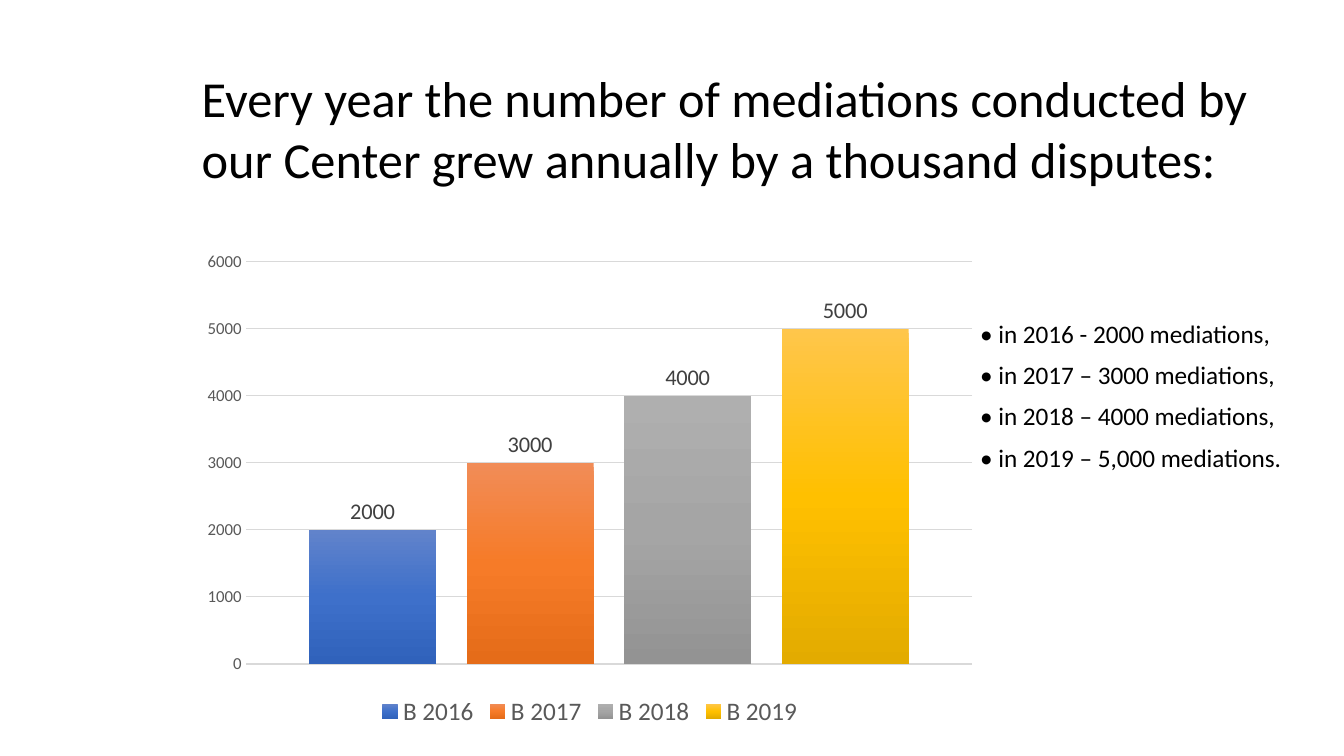
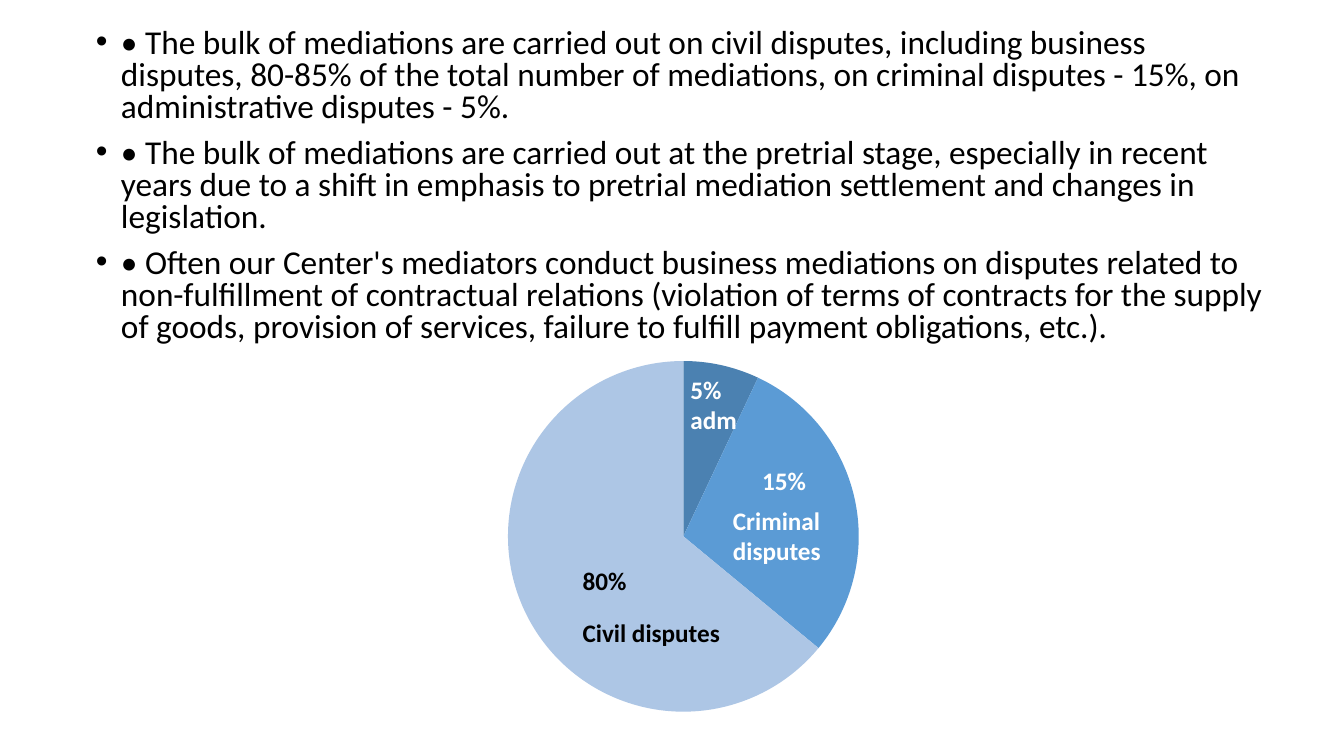
from lxml import etree
from pptx import Presentation
from pptx.chart.data import CategoryChartData
from pptx.dml.color import RGBColor
from pptx.enum import chart as ch, text
from pptx.oxml import parse_xml
from pptx.oxml.ns import nsdecls, qn
from pptx.util import Inches, Pt

W, H = 13.33, 7.5
FONT = "Calibri"
COLORS = {"black": "000000", "white": "FFFFFF", "axis": "595959",
          "label": "404040", "grid": "D9D9D9"}

TITLE = "Every year the number of mediations conducted by our Center grew annually by a thousand disputes:"
YEAR_LINES = [
    "• in 2016 - 2000 mediations,",
    "• in 2017 – 3000 mediations,",
    "• in 2018 – 4000 mediations,",
    "• in 2019 – 5,000 mediations.",
]
YEARS = [
    ("В 2016", 2000, ("6183CB", "3E70CA", "3062BB")),
    ("В 2017", 3000, ("F18C57", "F67B28", "E56C19")),
    ("В 2018", 4000, ("AFAFAF", "A5A5A5", "939393")),
    ("В 2019", 5000, ("FFC64B", "FFC000", "E3AB00")),
]
PRACTICE = [
    "• The bulk of mediations are carried out on civil disputes, including business disputes, 80-85% of the total number of mediations, on criminal disputes - 15%, on administrative disputes - 5%.",
    "• The bulk of mediations are carried out at the pretrial stage, especially in recent years due to a shift in emphasis to pretrial mediation settlement and changes in legislation.",
    "• Often our Center's mediators conduct business mediations on disputes related to non-fulfillment of contractual relations (violation of terms of contracts for the supply of goods, provision of services, failure to fulfill payment obligations, etc.).",
]
SLICE_COLORS = {"1": "4B81B1", "2": "5B9BD5", "3": "ADC6E5"}
PIE_SERIES = {"Series 1": (7, 29, 64), "Series 2": (29, 37, 33), "Series 3": (33, 34, 33)}
PIE_AREA = {"x": 0.184, "y": 0.078, "w": 0.517, "h": 0.847}
PIE_LABELS = [
    (["80%"], (5.68, 5.56, 6.67, 0.4), "black"),
    (["Criminal disputes"], (7.17, 4.96, 1.29, 0.71), "white"),
    (["15%"], (7.46, 4.57, 5.5, 0.4), "white"),
    (["Civil disputes"], (5.68, 6.08, 7.16, 0.4), "black"),
    (["5%", "adm"], (6.75, 3.66, 6, 0.71), "white"),
]


def rgb(value):
    return RGBColor.from_string(COLORS.get(value, value))


def apply(obj, **values):
    for name, value in values.items():
        setattr(obj, name, value)


def style_font(font, size, color="black", bold=False):
    apply(font, name=FONT, size=Pt(size), bold=bold)
    font.color.rgb = rgb(color)


def place(sp, box):
    apply(sp, **dict(zip(("left", "top", "width", "height"), map(Inches, box))))


def write(sp, lines, size, color="black", bold=False, spacing=1.0, before=0,
          bullet=None, fit=text.MSO_AUTO_SIZE.NONE):
    tf = sp.text_frame
    apply(tf, word_wrap=True, auto_size=fit, vertical_anchor=text.MSO_ANCHOR.TOP)
    for i, line in enumerate(lines):
        p = tf.paragraphs[0] if i == 0 else tf.add_paragraph()
        if sp.is_placeholder:
            indent = Inches(0.25) if bullet else 0
            pPr = p._p.get_or_add_pPr()
            pPr.set("marL", str(indent))
            pPr.set("indent", str(-indent))
            if bullet:
                etree.SubElement(pPr, qn("a:buChar")).set("char", bullet)
            else:
                etree.SubElement(pPr, qn("a:buNone"))
        apply(p, alignment=text.PP_ALIGN.LEFT, line_spacing=spacing,
              space_before=Pt(before if i else 0), space_after=Pt(0))
        r = p.add_run()
        r.text = line
        style_font(r.font, size, color, bold)


def add_chart(s, kind, box, data, size, bold=False):
    chart = s.shapes.add_chart(kind, *map(Inches, box), data).chart
    apply(chart, has_title=False, has_legend=False)
    style_font(chart.font, size, bold=bold)
    chart._chartSpace.find(qn("c:chart")).addnext(parse_xml(
        f'<c:spPr {nsdecls("c", "a")}><a:noFill/><a:ln><a:noFill/></a:ln></c:spPr>'))
    return chart


def fill_gradient(series, stops):
    fill = series.format.fill
    fill.gradient()
    fill.gradient_angle = 270
    gs_list = series._element.find(".//" + qn("a:gsLst"))
    for gs in list(gs_list):
        gs_list.remove(gs)
    for i, color in enumerate(stops):
        gs = etree.SubElement(gs_list, qn("a:gs"), pos=str(i * 50000))
        etree.SubElement(gs, qn("a:srgbClr"), val=color)


def set_plot_area(chart, area):
    plot_area = chart._chartSpace.find(".//" + qn("c:plotArea"))
    for old in plot_area.findall(qn("c:layout")):
        plot_area.remove(old)
    layout = etree.Element(qn("c:layout"))
    manual = etree.SubElement(layout, qn("c:manualLayout"))
    values = {"layoutTarget": "inner", "xMode": "edge", "yMode": "edge", **area}
    for name, value in values.items():
        etree.SubElement(manual, qn("c:" + name), val=str(value))
    plot_area.insert(0, layout)


def build_growth(prs):
    s = prs.slides.add_slide(prs.slide_layouts[1])
    title, body = s.shapes.title, s.placeholders[1]
    place(title, (1.9, 0.62, 10.64, 1.31))
    write(title, [TITLE], 36)
    place(body, (9.62, 3.14, 3.71, 2.47))
    write(body, YEAR_LINES, 18, spacing=0.9, before=10)

    data = CategoryChartData()
    data.categories = ["1"]
    for name, value, _ in YEARS:
        data.add_series(name, [value])
    chart = add_chart(s, ch.XL_CHART_TYPE.COLUMN_CLUSTERED, (1.9, 2.4, 7.9, 4.86), data, 10)
    chart.has_legend = True
    apply(chart.legend, position=ch.XL_LEGEND_POSITION.BOTTOM, include_in_layout=False)
    style_font(chart.legend.font, 18, "axis")
    chart.category_axis.visible = False
    axis = chart.value_axis
    apply(axis, minimum_scale=0, maximum_scale=6000, major_unit=1000,
          major_tick_mark=ch.XL_TICK_MARK.NONE, has_major_gridlines=True)
    style_font(axis.tick_labels.font, 12, "axis")
    axis.format.line.fill.background()
    grid = axis.major_gridlines.format.line
    grid.color.rgb = rgb("grid")
    grid.width = Pt(0.75)
    plot = chart.plots[0]
    apply(plot, gap_width=100, overlap=-24, vary_by_categories=False)
    for series, (_, _, stops) in zip(plot.series, YEARS):
        fill_gradient(series, stops)
        labels = series.data_labels
        apply(labels, show_value=True, position=ch.XL_LABEL_POSITION.OUTSIDE_END)
        style_font(labels.font, 16, "label")


def build_practice(prs):
    s = prs.slides.add_slide(prs.slide_layouts[1])
    title, body = s.shapes.title, s.placeholders[1]
    title._element.getparent().remove(title._element)
    place(body, (0.85, 0.24, 11.8, 3.39))
    write(body, PRACTICE, 23.8, spacing=0.8, before=10, bullet="•")

    data = CategoryChartData()
    data.categories = list(SLICE_COLORS)
    for name, values in PIE_SERIES.items():
        data.add_series(name, values)
    chart = add_chart(s, ch.XL_CHART_TYPE.PIE, (3.8, 3.08, 6.73, 4.47), data, 8.5, True)
    chart.replace_data(data)
    set_plot_area(chart, PIE_AREA)
    plot = chart.plots[0]
    plot.vary_by_categories = True
    for series in plot.series:
        for i, color in enumerate(SLICE_COLORS.values()):
            fmt = series.points[i].format
            fmt.fill.solid()
            fmt.fill.fore_color.rgb = rgb(color)
            fmt.line.fill.background()

    for lines, box, color in PIE_LABELS:
        sp = s.shapes.add_textbox(*map(Inches, box))
        write(sp, lines, 18, color, True, fit=text.MSO_AUTO_SIZE.SHAPE_TO_FIT_TEXT)


def main():
    prs = Presentation()
    apply(prs, slide_width=Inches(W), slide_height=Inches(H))
    build_growth(prs)
    build_practice(prs)
    prs.save("out.pptx")


if __name__ == "__main__":
    main()
